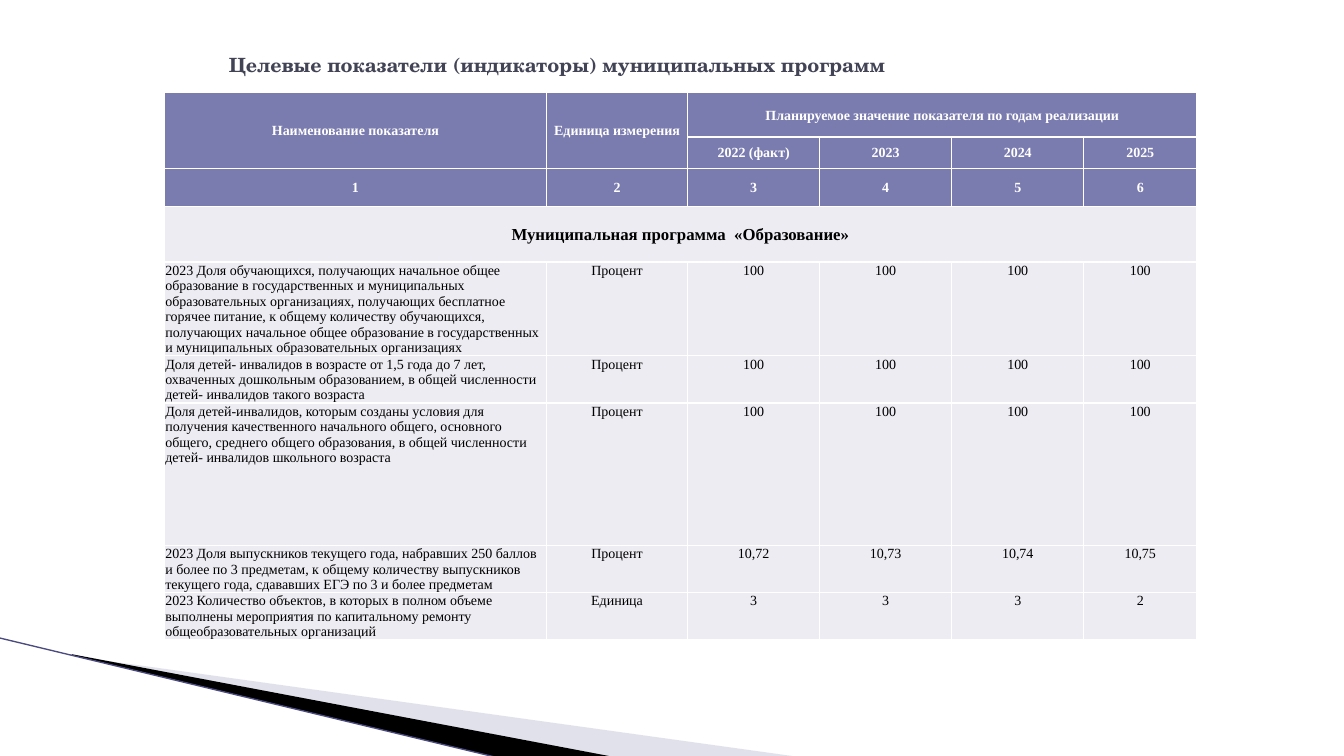
from lxml.etree import SubElement
from pptx import Presentation
from pptx.dml.color import RGBColor
from pptx.enum.shapes import MSO_CONNECTOR
from pptx.enum.text import MSO_ANCHOR, MSO_AUTO_SIZE, PP_ALIGN
from pptx.oxml import parse_xml
from pptx.oxml.ns import nsdecls, qn
from pptx.util import Pt

PX = 9144  # 100 px to the inch
COLORS = {
    "title": "424456", "head": "7A7BAE", "body": "ECECF2", "white": "FFFFFF",
    "black": "000000", "tint": "B6B6D1", "line": "4B4B80",
}
SERIF = "Times New Roman"
COLS = [379, 140, 131, 131, 131, 112]
ROWS = [44, 31, 38, 55, 80, 43, 141, 43, 43]
HEADS = 3
SECTION = 3
MERGES = [(0, 0, 1, 0), (0, 1, 1, 1), (0, 2, 0, 5), (SECTION, 0, SECTION, 5)]
DATA = [
    ["Наименование показателя", "Единица измерения",
     "Планируемое значение показателя по годам реализации"],
    ["", "", "2022 (факт)", "2023", "2024", "2025"],
    ["1", "2", "3", "4", "5", "6"],
    ["Муниципальная программа  «Образование»"],
    ["2023 Доля обучающихся, получающих начальное общее образование в "
     "государственных и муниципальных образовательных организациях, получающих "
     "бесплатное горячее питание, к общему количеству обучающихся, получающих "
     "начальное общее образование в государственных и муниципальных "
     "образовательных организациях", "Процент", "100", "100", "100", "100"],
    ["Доля детей- инвалидов в возрасте от 1,5 года до 7 лет, охваченных "
     "дошкольным образованием, в общей численности детей- инвалидов такого "
     "возраста", "Процент", "100", "100", "100", "100"],
    ["Доля детей-инвалидов, которым созданы условия для получения качественного "
     "начального общего, основного общего, среднего общего образования, в общей "
     "численности детей- инвалидов школьного возраста",
     "Процент", "100", "100", "100", "100"],
    ["2023 Доля выпускников текущего года, набравших 250 баллов и более по 3 "
     "предметам, к общему количеству выпускников текущего года, сдававших ЕГЭ "
     "по 3 и более предметам", "Процент", "10,72", "10,73", "10,74", "10,75"],
    ["2023 Количество объектов, в которых в полном объеме выполнены мероприятия "
     "по капитальному ремонту общеобразовательных организаций",
     "Единица", "3", "3", "3", "2"],
]


def rgb(name):
    return RGBColor.from_string(COLORS[name])


def add_run(para, text, font, size, color, bold):
    run = para.add_run()
    run.text = text
    run.font.name = font
    run.font.size = Pt(size)
    run.font.bold = bold
    run.font.color.rgb = rgb(color)


def add_wedge(slide, left, top, points, color, alpha=None):
    """Draw a filled outline whose points are offsets from left and top."""
    spots = [((left + x) * PX, (top + y) * PX) for x, y in points]
    build = slide.shapes.build_freeform(*spots[0], scale=1.0)
    build.add_line_segments(spots[1:], close=True)
    wedge = build.convert_to_shape()
    wedge.shadow.inherit = False
    wedge.fill.solid()
    wedge.fill.fore_color.rgb = rgb(color)
    wedge.line.fill.background()
    if alpha:
        tone = wedge.fill._xPr.find(qn("a:solidFill"))[0]
        SubElement(tone, qn("a:alpha")).set("val", str(alpha * 1000))


def add_corner(slide, left, top):
    add_wedge(slide, left + 73, top + 17,
              [(0, 1), (720, 101), (535, 101), (0, 0)], "tint", 40)
    add_wedge(slide, left + 71, top + 16,
              [(0, 0), (538, 102), (425, 103), (1, 1)], "black")
    edge = slide.shapes.add_connector(
        MSO_CONNECTOR.STRAIGHT, left * PX, top * PX,
        (left + 495) * PX, (top + 119) * PX)
    edge.line.width = Pt(0.95)
    edge.line.color.rgb = rgb("line")
    SubElement(edge._element.spPr, qn("a:effectLst"))


def set_title(slide, left, top, width, height):
    title = slide.shapes.title
    title.left, title.top = left * PX, top * PX
    title.width, title.height = width * PX, height * PX
    frame = title.text_frame
    frame.word_wrap = True
    frame.auto_size = MSO_AUTO_SIZE.NONE
    frame.vertical_anchor = MSO_ANCHOR.MIDDLE
    para = frame.paragraphs[0]
    para.alignment = PP_ALIGN.LEFT
    add_run(para, "Целевые показатели (индикаторы) муниципальных программ",
            "TeX Gyre Schola", 14, "title", True)


def style_cell(cell, fill, middle):
    props = cell._tc.get_or_add_tcPr()
    for side in ("lnL", "lnR", "lnT", "lnB"):
        props.append(parse_xml(
            f'<a:{side} {nsdecls("a")} w="{Pt(1)}"><a:solidFill>'
            f'<a:srgbClr val="{COLORS["white"]}"/></a:solidFill></a:{side}>'))
    cell.fill.solid()
    cell.fill.fore_color.rgb = rgb(fill)
    cell.margin_left = cell.margin_right = cell.margin_top = PX
    cell.margin_bottom = 0
    cell.vertical_anchor = MSO_ANCHOR.MIDDLE if middle else MSO_ANCHOR.TOP


def add_grid(slide, left, top):
    table = slide.shapes.add_table(
        len(ROWS), len(COLS), left * PX, top * PX,
        sum(COLS) * PX, sum(ROWS) * PX).table
    table.first_row = table.horz_banding = False
    for col, width in zip(table.columns, COLS):
        col.width = width * PX
    for row, height in zip(table.rows, ROWS):
        row.height = height * PX
    for r in range(len(ROWS)):
        head, bold = r < HEADS, r <= SECTION
        for c in range(len(COLS)):
            style_cell(table.cell(r, c), "head" if head else "body", bold)
        for c, text in enumerate(DATA[r]):
            if text:
                para = table.cell(r, c).text_frame.paragraphs[0]
                para.alignment = PP_ALIGN.CENTER if bold or c else PP_ALIGN.LEFT
                add_run(para, text, SERIF, 12 if r == SECTION else 10,
                        "white" if head else "black", bold)
    for r, c, low, right in MERGES:
        table.cell(r, c).merge(table.cell(low, right))


def main():
    deck = Presentation()
    deck.slide_width, deck.slide_height = 1333 * PX, 750 * PX
    slide = deck.slides.add_slide(deck.slide_layouts[5])
    add_corner(slide, 0, 633)
    set_title(slide, 217, 30, 900, 69)
    add_grid(slide, 163, 92)
    deck.save("out.pptx")


if __name__ == "__main__":
    main()
